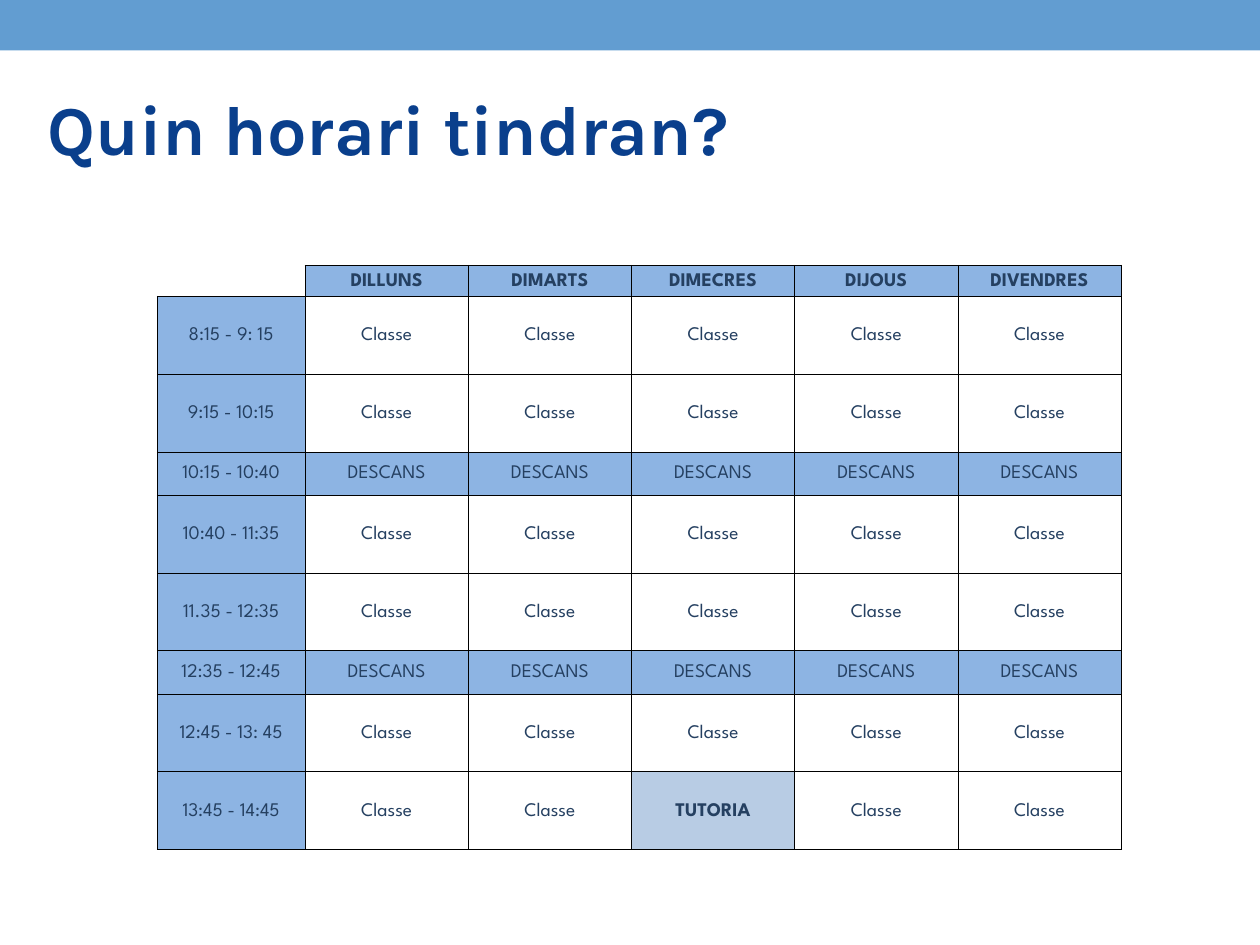
import lxml.etree
import pptx
import pptx.dml.color
import pptx.enum.shapes
import pptx.enum.text
import pptx.oxml.ns
import pptx.util

Cm = pptx.util.Cm
Pt = pptx.util.Pt
RGBColor = pptx.dml.color.RGBColor
qn = pptx.oxml.ns.qn

BAND_BLUE = RGBColor(0x62, 0x9D, 0xD1)
TITLE_BLUE = RGBColor(0x0A, 0x3F, 0x8C)
HEADER_BLUE = RGBColor(0x8D, 0xB4, 0xE3)
TUTORIAL_BLUE = RGBColor(0xB8, 0xCC, 0xE4)
TEXT_BLUE = RGBColor(0x25, 0x40, 0x61)
BLACK = RGBColor(0, 0, 0)

DAYS = ["DILLUNS", "DIMARTS", "DIMECRES", "DIJOUS", "DIVENDRES"]
LESSON, BREAK, TUTORIAL = "Classe", "DESCANS", "TUTORIA"
SLOTS = [
    ("8:15 - 9: 15", LESSON),
    ("9:15 - 10:15", LESSON),
    ("10:15 - 10:40", BREAK),
    ("10:40 - 11:35", LESSON),
    ("11.35 - 12:35", LESSON),
    ("12:35 - 12:45", BREAK),
    ("12:45 - 13: 45", LESSON),
    ("13:45 - 14:45", LESSON),
]
HEADER_HEIGHT = Cm(0.62)
SLOT_HEIGHTS = {LESSON: Cm(1.57), BREAK: Cm(0.87)}
HOUR_WIDTH, DAY_WIDTH = Cm(2.98), Cm(3.29)


def add_span(para, text, font, size, color, bold):
    """Add one formatted run to a paragraph and return it."""
    span = para.add_run()
    span.text = text
    span.font.name = font
    span.font.size = size
    span.font.color.rgb = color
    span.font.bold = bold
    return span


def add_band(page, width):
    """Draw the coloured band along the top of the slide."""
    band = page.shapes.add_shape(
        pptx.enum.shapes.MSO_SHAPE.RECTANGLE, 0, 0, width, Cm(1.02))
    band.shadow.inherit = False
    band.fill.solid()
    band.fill.fore_color.rgb = BAND_BLUE
    band.line.fill.background()


def set_title(page, text):
    """Place and format the title placeholder."""
    title = page.shapes.title
    title.left, title.top = Cm(0.71), Cm(1.52)
    title.width, title.height = Cm(24.26), Cm(2.11)
    title.text_frame.vertical_anchor = pptx.enum.text.MSO_ANCHOR.MIDDLE
    para = title.text_frame.paragraphs[0]
    para.alignment = pptx.enum.text.PP_ALIGN.LEFT
    span = add_span(para, text, "Karla", Pt(40), TITLE_BLUE, True)
    span.font._element.set("spc", "-1")


def set_borders(cell, visible):
    """Give the named sides a thin black line and the others none."""
    properties = cell._tc.get_or_add_tcPr()
    for side in "LRTB":
        line = lxml.etree.SubElement(
            properties, qn(f"a:ln{side}"), w=str(Pt(0.5)))
        if side in visible:
            fill = lxml.etree.SubElement(line, qn("a:solidFill"))
            lxml.etree.SubElement(fill, qn("a:srgbClr"), val=str(BLACK))
        else:
            lxml.etree.SubElement(line, qn("a:noFill"))


def format_cell(cell, text, fill=None, bold=False, borders="LRTB"):
    """Write one timetable cell with its borders and fill."""
    set_borders(cell, borders)
    if fill is None:
        cell.fill.background()
    else:
        cell.fill.solid()
        cell.fill.fore_color.rgb = fill
    cell.margin_left = cell.margin_right = cell.margin_top = Cm(0.03)
    cell.margin_bottom = 0
    cell.vertical_anchor = pptx.enum.text.MSO_ANCHOR.MIDDLE
    para = cell.text_frame.paragraphs[0]
    para.alignment = pptx.enum.text.PP_ALIGN.CENTER
    if text:
        add_span(para, text, "League Spartan", Pt(11), TEXT_BLUE, bold)
    else:
        lxml.etree.SubElement(para._p, qn("a:endParaRPr"), sz="1100")


def add_timetable(page):
    """Build the weekly timetable from the days and time slots."""
    heights = [HEADER_HEIGHT] + [SLOT_HEIGHTS[kind] for _, kind in SLOTS]
    widths = [HOUR_WIDTH] + [DAY_WIDTH] * len(DAYS)
    table = page.shapes.add_table(
        len(heights), len(widths), Cm(3.17), Cm(5.35),
        sum(widths), sum(heights)).table
    table.first_row = table.horz_banding = False
    for row, height in zip(table.rows, heights):
        row.height = height
    for column, width in zip(table.columns, widths):
        column.width = width

    format_cell(table.cell(0, 0), "", borders="RB")
    for col, day in enumerate(DAYS, 1):
        format_cell(table.cell(0, col), day, HEADER_BLUE, True)
    for row, (hours, kind) in enumerate(SLOTS, 1):
        format_cell(table.cell(row, 0), hours, HEADER_BLUE)
        for col, day in enumerate(DAYS, 1):
            cell = table.cell(row, col)
            if row == len(SLOTS) and day == "DIMECRES":
                format_cell(cell, TUTORIAL, TUTORIAL_BLUE, True)
            else:
                format_cell(cell, kind, HEADER_BLUE if kind == BREAK else None)


def main():
    """Build and save the timetable slide."""
    deck = pptx.Presentation()
    deck.slide_width, deck.slide_height = Cm(25.4), Cm(19.05)
    page = deck.slides.add_slide(deck.slide_layouts[5])
    add_band(page, deck.slide_width)
    set_title(page, "Quin horari tindran?")
    add_timetable(page)
    deck.save("out.pptx")


if __name__ == "__main__":
    main()
